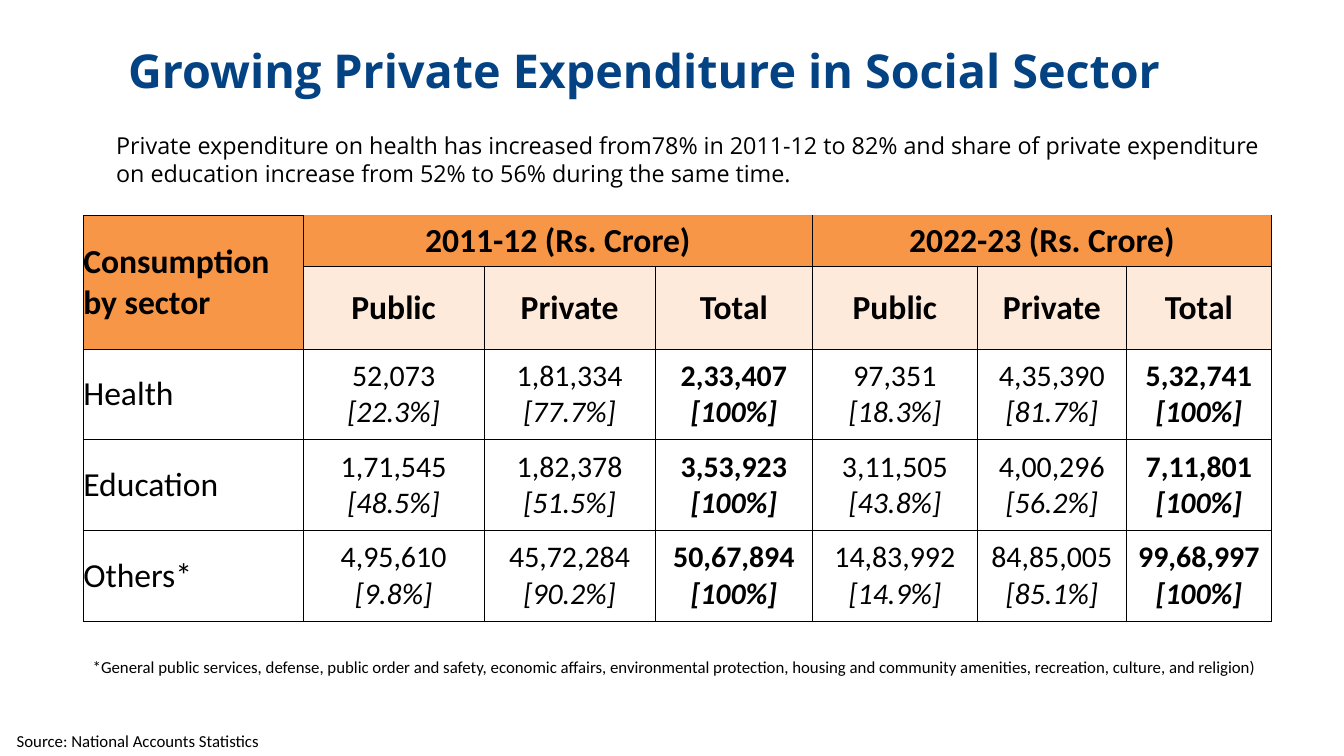
from dataclasses import dataclass

from lxml import etree
from pptx import Presentation
from pptx.dml.color import RGBColor
from pptx.enum.text import MSO_ANCHOR, MSO_AUTO_SIZE, PP_ALIGN
from pptx.oxml.ns import qn
from pptx.util import Pt

LEFT, CENTER = PP_ALIGN.LEFT, PP_ALIGN.CENTER
MIDDLE = MSO_ANCHOR.MIDDLE
GROW = MSO_AUTO_SIZE.SHAPE_TO_FIT_TEXT

NAVY = RGBColor(0x03, 0x43, 0x83)
BLACK = RGBColor(0, 0, 0)
WHITE = RGBColor(0xFF, 0xFF, 0xFF)
ORANGE = RGBColor(0xF7, 0x96, 0x46)
AMBER = RGBColor(0xF6, 0x92, 0x40)
PEACH = RGBColor(0xFD, 0xEA, 0xDA)

SANS, BODY = "Open Sans", "Calibri"


@dataclass
class Box:
    text: str
    left: float
    top: float
    width: float
    height: float
    size: float
    font: str = BODY
    color: RGBColor = BLACK
    bold: bool = False
    align: PP_ALIGN = LEFT
    space: float | None = None
    inset: bool = True
    wrap: bool = True


@dataclass
class Sector:
    name: str
    sums: list[str]
    shares: list[str]


BOXES = [
    Box("Growing Private Expenditure in Social Sector", 95, 49.7, 1191.6, 55.4, 50,
        SANS, NAVY, True, CENTER, space=55, inset=False),
    Box("Source: National Accounts Statistics", 10.8, 779.8, 504, 28.8, 18),
    Box("*General public services, defense, public order and safety, economic affairs, "
        "environmental protection, housing and community amenities, recreation, culture, "
        "and religion)", 92.2, 700.6, 1273, 28.8, 18, wrap=False),
    Box("Private expenditure on health has increased from78% in 2011-12 to 82% and share "
        "of private expenditure on education increase from 52% to 56% during the same time.",
        117.4, 136.8, 1275.1, 67.7, 25, SANS),
]

YEARS = ["2011-12 (Rs. Crore)", "2022-23 (Rs. Crore)"]
KINDS = ["Public", "Private", "Total"]
SECTORS = [
    Sector("Health",
           ["52,073", "1,81,334", "2,33,407", "97,351", "4,35,390", "5,32,741"],
           ["22.3%", "77.7%", "100%", "18.3%", "81.7%", "100%"]),
    Sector("Education",
           ["1,71,545", "1,82,378", "3,53,923", "3,11,505", "4,00,296", "7,11,801"],
           ["48.5%", "51.5%", "100%", "43.8%", "56.2%", "100%"]),
    Sector("Others*",
           ["4,95,610", "45,72,284", "50,67,894", "14,83,992", "84,85,005", "99,68,997"],
           ["9.8%", "90.2%", "100%", "14.9%", "85.1%", "100%"]),
]
WIDTHS = [235.7, 193.6, 183.6, 168.4, 176.6, 159.8, 155.3]
HEIGHTS = [54.7, 54.7] + [97.2] * len(SECTORS)


def write(frame, text: str, *, size: float, font: str = BODY, color: RGBColor = BLACK,
          bold: bool = False, slant: bool = False, align: PP_ALIGN = LEFT,
          space: float | None = None) -> None:
    """Fill the first paragraph if it is empty, else add a new one."""
    para = frame.paragraphs[0]
    if para.runs:
        para = frame.add_paragraph()
    para.alignment = align
    if space:
        para.line_spacing = Pt(space)
    run = para.add_run()
    run.text = text
    face = run.font
    face.name, face.size, face.bold, face.italic = font, Pt(size), bold, slant
    face.color.rgb = color


def add_box(slide, box: Box) -> None:
    shape = slide.shapes.add_textbox(Pt(box.left), Pt(box.top), Pt(box.width), Pt(box.height))
    frame = shape.text_frame
    frame.word_wrap = box.wrap
    frame.auto_size = GROW
    if not box.inset:
        frame.margin_left = frame.margin_right = frame.margin_top = frame.margin_bottom = 0
    write(frame, box.text, size=box.size, font=box.font, color=box.color,
          bold=box.bold, align=box.align, space=box.space)


def edge(cell, side: str, color: RGBColor, width: float) -> None:
    line = etree.SubElement(cell._tc.get_or_add_tcPr(), qn(f"a:ln{side}"), w=str(Pt(width)))
    fill = etree.SubElement(line, qn("a:solidFill"))
    etree.SubElement(fill, qn("a:srgbClr"), val=str(color))


def style(cell, row: int, col: int) -> None:
    """Set margins, borders and fill by place in the grid."""
    cell.margin_left = cell.margin_right = cell.margin_top = cell.margin_bottom = 0
    cell.vertical_anchor = MIDDLE
    for side in "LRTB":
        rim = row == 0 and col > 0 and (
            side == "T" or side == "R" and col == len(WIDTHS) - 1)
        edge(cell, side, AMBER if rim else BLACK, 0.75 if rim else 1)
    cell.fill.solid()
    head = row == 0 or row == 1 and col == 0
    cell.fill.fore_color.rgb = ORANGE if head else PEACH if row == 1 else WHITE


def add_grid(slide) -> None:
    grid = slide.shapes.add_table(len(HEIGHTS), len(WIDTHS), Pt(89.3), Pt(231.1),
                                  Pt(sum(WIDTHS)), Pt(sum(HEIGHTS))).table
    grid.first_row = grid.horz_banding = False
    for col, width in enumerate(WIDTHS):
        grid.columns[col].width = Pt(width)
    for row, height in enumerate(HEIGHTS):
        grid.rows[row].height = Pt(height)
        for col in range(len(WIDTHS)):
            style(grid.cell(row, col), row, col)

    # Header rows
    grid.cell(0, 0).merge(grid.cell(1, 0))
    write(grid.cell(0, 0).text_frame, "Consumption by sector", size=36, bold=True)
    for part, year in enumerate(YEARS):
        first = 1 + part * len(KINDS)
        grid.cell(0, first).merge(grid.cell(0, first + len(KINDS) - 1))
        write(grid.cell(0, first).text_frame, year, size=36, bold=True, align=CENTER)
        for col, kind in enumerate(KINDS, first):
            write(grid.cell(1, col).text_frame, kind, size=36, bold=True, align=CENTER)

    # Sector rows: sum above share, totals in bold
    for row, sector in enumerate(SECTORS, 2):
        write(grid.cell(row, 0).text_frame, sector.name, size=36)
        for col, (total, share) in enumerate(zip(sector.sums, sector.shares), 1):
            frame = grid.cell(row, col).text_frame
            bold = col % len(KINDS) == 0
            write(frame, total, size=32, bold=bold, align=CENTER)
            write(frame, f"[{share}]", size=32, bold=bold, slant=True, align=CENTER)


def main() -> None:
    deck = Presentation()
    deck.slide_width, deck.slide_height = Pt(1440), Pt(810)
    slide = deck.slides.add_slide(deck.slide_layouts[6])
    add_grid(slide)
    for box in BOXES:
        add_box(slide, box)
    deck.save("out.pptx")


if __name__ == "__main__":
    main()
